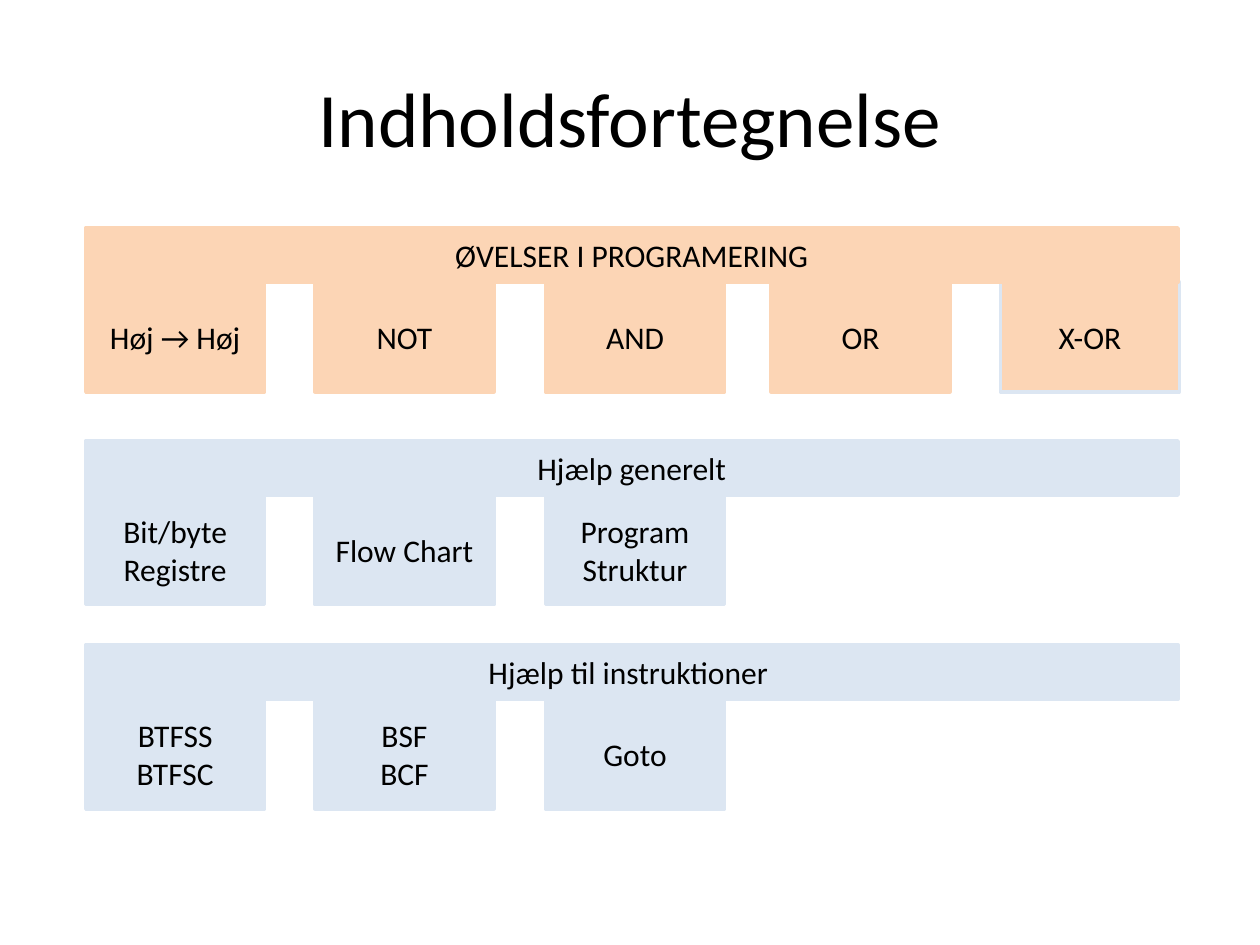
from pptx import Presentation
from pptx.dml.color import RGBColor
from pptx.enum.shapes import MSO_SHAPE
from pptx.enum.text import MSO_ANCHOR, PP_ALIGN
from pptx.util import Inches, Pt

BLACK = RGBColor(0x00, 0x00, 0x00)
ORANGE = RGBColor(0xFC, 0xD5, 0xB5)
BLUE = RGBColor(0xDC, 0xE6, 0xF2)

COLUMNS = [0.68, 2.5, 4.33, 6.12, 7.94]
HEADER_WIDTH, HEADER_HEIGHT = 8.67, 0.43
TAB_WIDTH, TAB_HEIGHT = 1.42, 0.87

SECTIONS = [
    (1.81, ORANGE, "ØVELSER I PROGRAMERING", ["Høj → Høj", "NOT", "AND", "OR", "X-OR"]),
    (3.5, BLUE, "Hjælp generelt", ["Bit/byte\nRegistre", "Flow Chart", "Program\nStruktur"]),
    (5.12, BLUE, "Hjælp til instruktioner ", ["BTFSS\nBTFSC", "BSF\nBCF", "Goto"]),
]


def write_text(box, text, size):
    frame = box.text_frame
    frame.word_wrap = True
    frame.vertical_anchor = MSO_ANCHOR.MIDDLE
    frame.text = text
    for para in frame.paragraphs:
        para.alignment = PP_ALIGN.CENTER
        para.font.name = "Calibri"
        para.font.size = Pt(size)
        para.font.color.rgb = BLACK


def add_block(left, top, width, height, text, fill, outline):
    block = page.shapes.add_shape(
        MSO_SHAPE.RECTANGLE, Inches(left), Inches(top), Inches(width), Inches(height)
    )
    block.shadow.inherit = False
    block.fill.solid()
    block.fill.fore_color.rgb = fill
    block.line.color.rgb = outline
    block.line.width = Pt(2)
    write_text(block, text, 18)


deck = Presentation()
deck.slide_width = Inches(10)
deck.slide_height = Inches(7.5)
page = deck.slides.add_slide(deck.slide_layouts[6])

title = page.shapes.add_textbox(Inches(0.5), Inches(0.3), Inches(9), Inches(1.25))
write_text(title, "Indholdsfortegnelse", 44)

for top, color, heading, tabs in SECTIONS:
    for left, label in zip(COLUMNS, tabs):
        outline = BLUE if label == "X-OR" else color
        add_block(left, top + HEADER_HEIGHT, TAB_WIDTH, TAB_HEIGHT, label, color, outline)
    add_block(COLUMNS[0], top, HEADER_WIDTH, HEADER_HEIGHT, heading, color, color)

deck.save("out.pptx")
